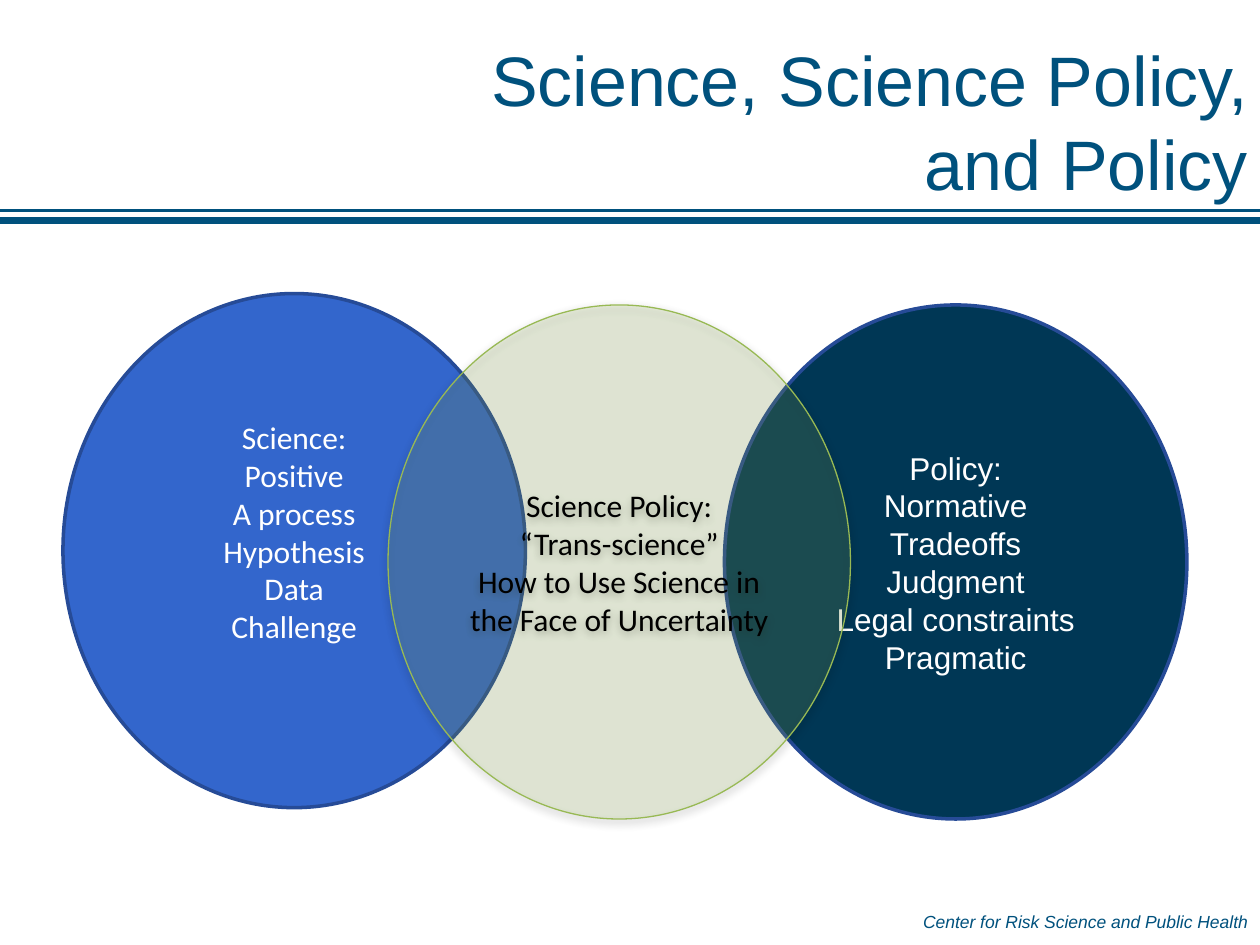
from lxml import etree
from pptx import Presentation
from pptx.dml.color import RGBColor
from pptx.enum import shapes, text
from pptx.oxml.ns import qn
from pptx.util import Inches, Pt

TEAL = RGBColor(0x00, 0x51, 0x7D)
BLUE = RGBColor(0x33, 0x66, 0xCC)
BLUE_EDGE = RGBColor(0x26, 0x4B, 0x97)
NAVY = RGBColor(0x00, 0x37, 0x55)
GREEN = RGBColor(0x9B, 0xBB, 0x59)
GREEN_EDGE = RGBColor(0x98, 0xB9, 0x54)
WHITE = RGBColor(0xFF, 0xFF, 0xFF)
BLACK = RGBColor(0x00, 0x00, 0x00)

CIRCLE_W, CIRCLE_H = 3.67, 4.08


def write(tf, lines, align, color, **font):
    """Fill a text frame with one paragraph per line, all in one format."""
    tf.word_wrap = True
    tf.vertical_anchor = text.MSO_ANCHOR.MIDDLE
    for i, line in enumerate(lines):
        p = tf.paragraphs[0] if i == 0 else tf.add_paragraph()
        p.alignment = align
        r = p.add_run()
        r.text = line
        r.font.color.rgb = color
        for name, value in font.items():
            setattr(r.font, name, value)


def add_label(s, left, top, width, height, line, **font):
    box = s.shapes.add_textbox(*map(Inches, (left, top, width, height)))
    write(box.text_frame, [line], text.PP_ALIGN.RIGHT, TEAL, name="Arial", **font)


def add_rule(s, y, weight):
    """Draw a line across the full slide width."""
    line = s.shapes.add_connector(
        shapes.MSO_CONNECTOR.STRAIGHT, 0, Inches(y), Inches(10), Inches(y))
    line.line.color.rgb = TEAL
    line.line.width = Pt(weight)
    etree.SubElement(line._element.spPr, qn("a:effectLst"))


def add_circle(s, left, top, fill, edge, weight, lines, color, font):
    sp = s.shapes.add_shape(
        shapes.MSO_SHAPE.OVAL,
        *map(Inches, (left, top, CIRCLE_W, CIRCLE_H)))
    sp.shadow.inherit = False
    sp.fill.solid()
    sp.fill.fore_color.rgb = fill
    sp.line.color.rgb = edge
    sp.line.width = Pt(weight)
    write(sp.text_frame, lines, text.PP_ALIGN.CENTER, color,
          name=font, size=Pt(18))
    return sp


def add_alpha(color_el, percent):
    etree.SubElement(color_el, qn("a:alpha"), val=str(percent * 1000))


def make_glassy(sp):
    """Make the fill see-through and cast a soft shadow downwards."""
    spPr = sp._element.spPr
    add_alpha(spPr.find(qn("a:solidFill"))[0], 18)
    shadow = etree.SubElement(
        spPr.find(qn("a:effectLst")), qn("a:outerShdw"),
        blurRad=str(Pt(5)), dist=str(Pt(1.6)), dir="5400000", rotWithShape="0")
    add_alpha(etree.SubElement(shadow, qn("a:srgbClr"), val=str(BLACK)), 38)


def main():
    prs = Presentation()
    prs.slide_width, prs.slide_height = Inches(10), Inches(7.5)
    s = prs.slides.add_slide(prs.slide_layouts[6])

    add_rule(s, 1.75, 4)
    add_rule(s, 1.67, 2)
    add_label(s, 4.17, 7.18, 5.83, 0.27,
              "Center for Risk Science and Public Health",
              size=Pt(10), italic=True)
    add_label(s, 3.17, 0.33, 6.83, 1.25,
              "Science, Science Policy, and Policy", size=Pt(40))

    science = add_circle(
        s, 0.5, 2.33, BLUE, BLUE_EDGE, 2,
        ["Science:", "Positive", "A process", "Hypothesis", "Data", "Challenge"],
        WHITE, "Calibri")
    science.text_frame.margin_bottom = Inches(0.35)
    add_circle(
        s, 5.75, 2.42, NAVY, BLUE_EDGE, 2,
        ["Policy:", "Normative", "Tradeoffs", "Judgment",
         "Legal constraints", "Pragmatic"],
        WHITE, "Arial")
    policy = add_circle(
        s, 3.08, 2.42, GREEN, GREEN_EDGE, 0.75,
        ["Science Policy:", "“Trans-science”",
         "How to Use Science in the Face of Uncertainty"],
        BLACK, "Calibri")
    make_glassy(policy)

    prs.save("out.pptx")


if __name__ == "__main__":
    main()
